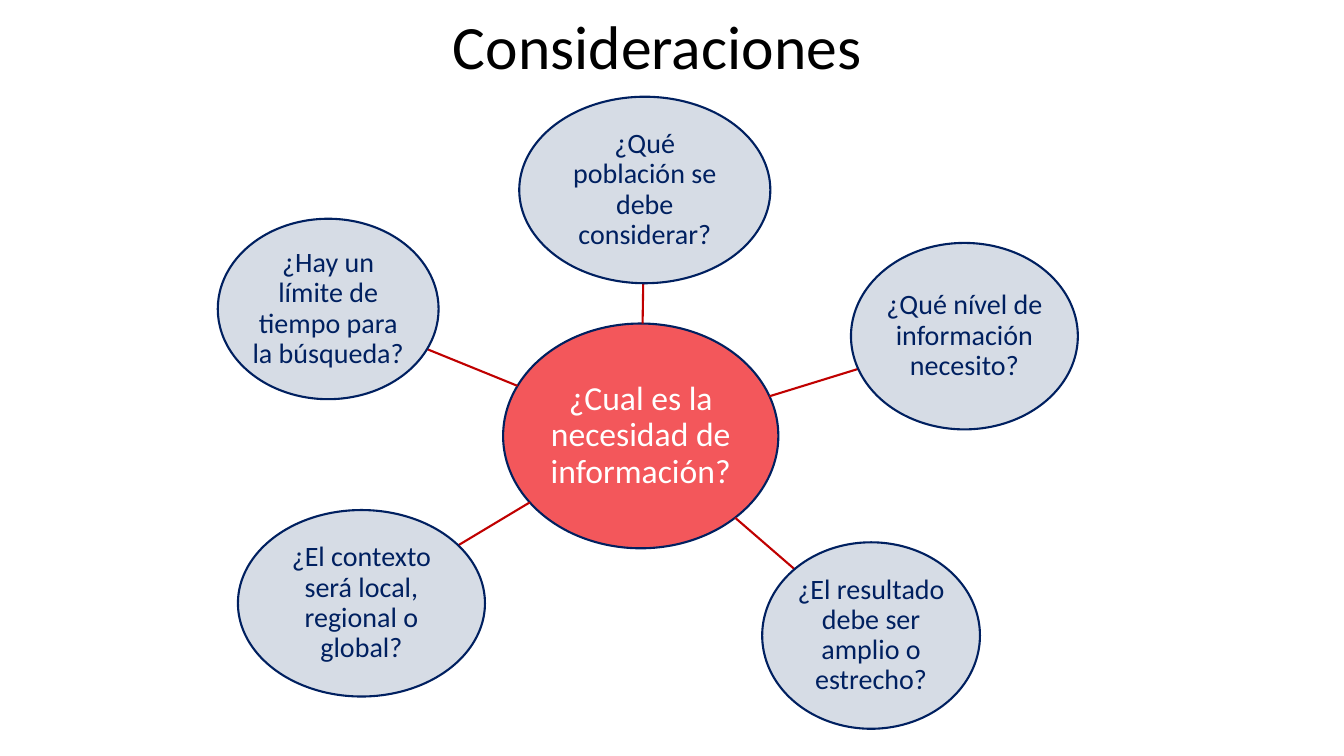
from dataclasses import dataclass
from math import hypot

from lxml.etree import SubElement
from pptx import Presentation
from pptx.dml.color import RGBColor
from pptx.enum.shapes import MSO_CONNECTOR, MSO_SHAPE
from pptx.enum.text import MSO_ANCHOR, PP_ALIGN
from pptx.oxml.ns import qn
from pptx.util import Inches, Pt


@dataclass(frozen=True)
class Theme:
    font: str = "Calibri"
    black: RGBColor = RGBColor.from_string("000000")
    white: RGBColor = RGBColor.from_string("FFFFFF")
    navy: RGBColor = RGBColor.from_string("002060")
    hub_fill: RGBColor = RGBColor.from_string("F3575B")
    node_fill: RGBColor = RGBColor.from_string("D6DCE5")
    spoke: RGBColor = RGBColor.from_string("C00000")
    title_size: int = 44
    hub_size: int = 24
    node_size: int = 20
    line_width: float = 1.5


@dataclass(frozen=True)
class Bubble:
    text: str
    left: float
    top: float
    width: float
    height: float

    @property
    def center(self):
        return self.left + self.width / 2, self.top + self.height / 2

    def edge_towards(self, other):
        """Point where the line to the other bubble's center leaves this ellipse."""
        x, y = self.center
        dx, dy = other.center[0] - x, other.center[1] - y
        scale = 1 / hypot(dx / (self.width / 2), dy / (self.height / 2))
        return x + dx * scale, y + dy * scale


THEME = Theme()
HUB = Bubble("¿Cual es la necesidad de información?", 4.99, 3.21, 2.73, 2.23)
NODES = [
    Bubble("¿Qué nível de información necesito?", 8.44, 2.41, 2.25, 1.85),
    Bubble("¿El resultado debe ser amplio o estrecho?", 7.56, 5.38, 2.16, 1.85),
    Bubble("¿Hay un límite de tiempo para la búsqueda?", 2.16, 2.17, 2.19, 1.79),
    Bubble("¿El contexto será local, regional o global?", 2.36, 5.06, 2.45, 1.85),
    Bubble("¿Qué población se debe considerar?", 5.15, 0.96, 2.49, 1.85),
]


def write_centered(frame, text, size, color, anchor):
    frame.text = text
    frame.word_wrap = True
    frame.vertical_anchor = anchor
    para = frame.paragraphs[0]
    para.alignment = PP_ALIGN.CENTER
    para.line_spacing = 0.9
    font = para.runs[0].font
    font.name = THEME.font
    font.size = Pt(size)
    font.color.rgb = color


def add_title(page, text):
    title = page.shapes.title
    title.left, title.top = Inches(0.77), Inches(0.11)
    title.width, title.height = Inches(11.5), Inches(1.45)
    write_centered(title.text_frame, text, THEME.title_size, THEME.black, MSO_ANCHOR.TOP)


def add_bubble(page, bubble, fill, size, color, inset):
    box = page.shapes.add_shape(
        MSO_SHAPE.OVAL, Inches(bubble.left), Inches(bubble.top),
        Inches(bubble.width), Inches(bubble.height))
    box.shadow.inherit = False
    box.fill.solid()
    box.fill.fore_color.rgb = fill
    box.line.color.rgb = THEME.navy
    box.line.width = Pt(THEME.line_width)
    frame = box.text_frame
    frame.margin_left = frame.margin_right = Inches(inset)
    frame.margin_top = frame.margin_bottom = Inches(inset)
    write_centered(frame, bubble.text, size, color, MSO_ANCHOR.MIDDLE)


def add_spoke(page, hub, node):
    ends = hub.edge_towards(node) + node.edge_towards(hub)
    spoke = page.shapes.add_connector(
        MSO_CONNECTOR.STRAIGHT, *(Inches(value) for value in ends))
    spoke.line.color.rgb = THEME.spoke
    spoke.line.width = Pt(THEME.line_width)
    SubElement(spoke.element.spPr, qn("a:effectLst"))


def main():
    deck = Presentation()
    deck.slide_width, deck.slide_height = Inches(13.33), Inches(7.5)
    page = deck.slides.add_slide(deck.slide_layouts[5])
    add_title(page, "Consideraciones")
    add_bubble(page, HUB, THEME.hub_fill, THEME.hub_size, THEME.white, 0.02)
    for node in NODES:
        add_spoke(page, HUB, node)
        add_bubble(page, node, THEME.node_fill, THEME.node_size, THEME.navy, 0.01)
    deck.save("out.pptx")


if __name__ == "__main__":
    main()
